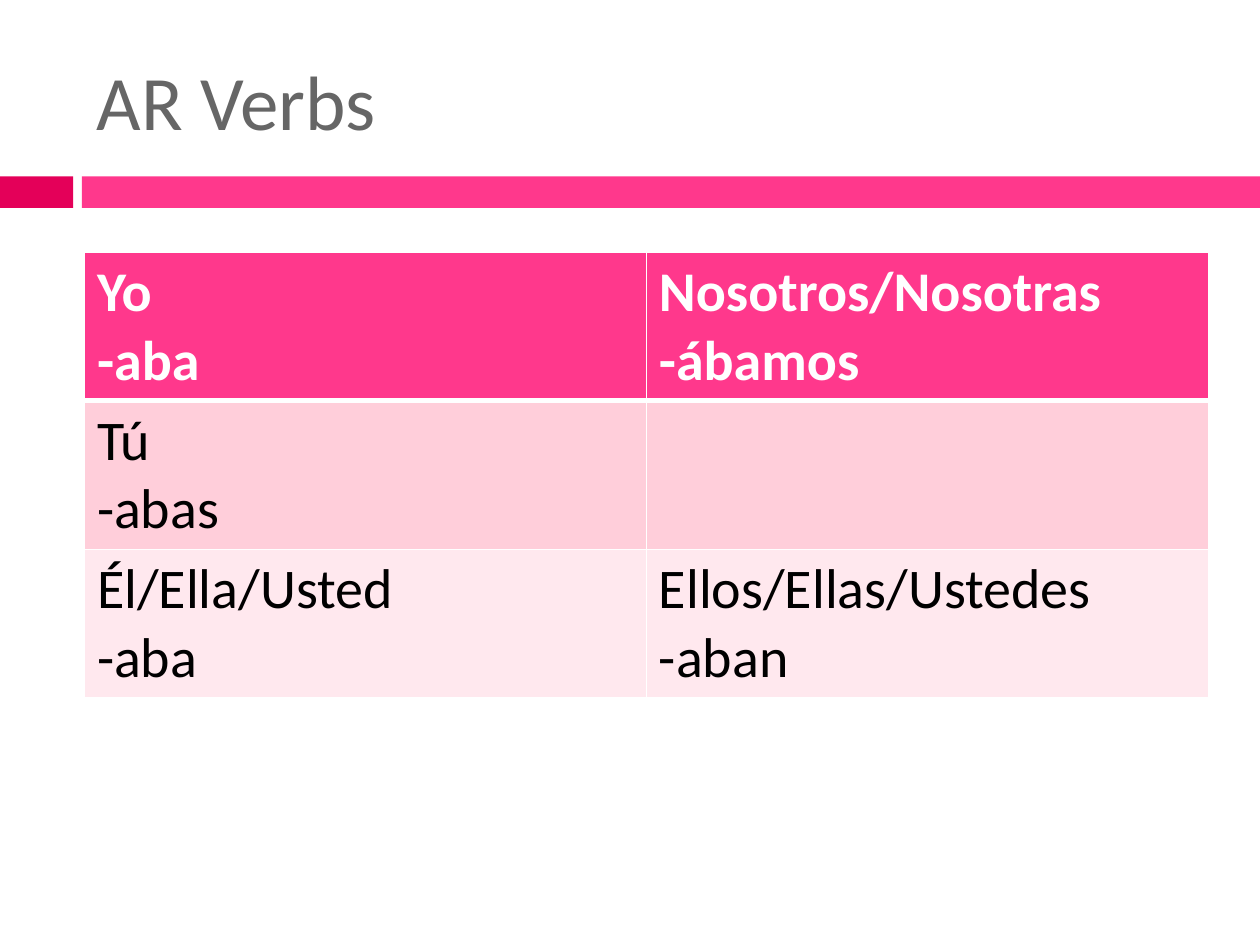
from dataclasses import dataclass
from lxml.etree import SubElement
from pptx import Presentation
from pptx.dml.color import RGBColor as RGB
from pptx.enum.shapes import MSO_SHAPE as Shape
from pptx.enum.text import MSO_ANCHOR as Anchor
from pptx.oxml.ns import qn
from pptx.util import Inches, Pt


@dataclass(frozen=True)
class Theme:
    font: str = "Calibri"
    title: str = "666666"
    dark: str = "E40059"
    pink: str = "FF388C"
    bands: tuple = ("FFCEDA", "FFE8EE")
    white: str = "FFFFFF"
    black: str = "000000"
    big: int = 44
    body: int = 32
    thin: int = 1
    thick: int = 3


THEME = Theme()
VERBS = [
    ["Yo\n-aba", "Nosotros/Nosotras\n-ábamos"],
    ["Tú\n-abas", ""],
    ["Él/Ella/Usted\n-aba", "Ellos/Ellas/Ustedes\n-aban"],
]


def paint(fill, color):
    fill.solid()
    fill.fore_color.rgb = RGB.from_string(color)


def write(frame, text, size, color, bold=False):
    frame.text = text
    for para in frame.paragraphs:
        font = para.font
        font.name = THEME.font
        font.size = Pt(size)
        font.bold = bold
        font.color.rgb = RGB.from_string(color)


def add_bar(slide, left, width, color):
    bar = slide.shapes.add_shape(
        Shape.RECTANGLE, Inches(left), Inches(1.4), Inches(width), Inches(0.25))
    bar.shadow.inherit = False
    paint(bar.fill, color)
    bar.line.fill.background()


def add_title(slide, text):
    box = slide.shapes.add_textbox(
        Inches(0.67), Inches(0.25), Inches(8.92), Inches(1.08))
    frame = box.text_frame
    frame.word_wrap = True
    frame.vertical_anchor = Anchor.MIDDLE
    write(frame, text, THEME.big, THEME.title)


def add_edges(cell, top, base):
    props = cell._tc.get_or_add_tcPr()
    widths = {"L": THEME.thin, "R": THEME.thin, "T": top, "B": base}
    for side, width in widths.items():
        line = SubElement(props, qn(f"a:ln{side}"), w=str(Pt(width)))
        fill = SubElement(line, qn("a:solidFill"))
        SubElement(fill, qn("a:srgbClr"), val=THEME.white)


def add_grid(slide, rows):
    grid = slide.shapes.add_table(
        len(rows), len(rows[0]), Inches(0.67), Inches(2),
        Inches(8.92), Inches(1.18 * len(rows))).table
    for i, row in enumerate(rows):
        head = i == 0
        top = THEME.thick if i == 1 else THEME.thin
        base = THEME.thick if head else THEME.thin
        back = THEME.pink if head else THEME.bands[(i - 1) % 2]
        ink = THEME.white if head else THEME.black
        for j, text in enumerate(row):
            cell = grid.cell(i, j)
            add_edges(cell, top, base)
            paint(cell.fill, back)
            write(cell.text_frame, text, THEME.body, ink, head)


def main():
    deck = Presentation()
    deck.slide_width = Inches(10)
    deck.slide_height = Inches(7.5)
    slide = deck.slides.add_slide(deck.slide_layouts[6])
    add_bar(slide, 0, 0.58, THEME.dark)
    add_bar(slide, 0.65, 9.35, THEME.pink)
    add_title(slide, "AR Verbs")
    add_grid(slide, VERBS)
    deck.save("out.pptx")


if __name__ == "__main__":
    main()
